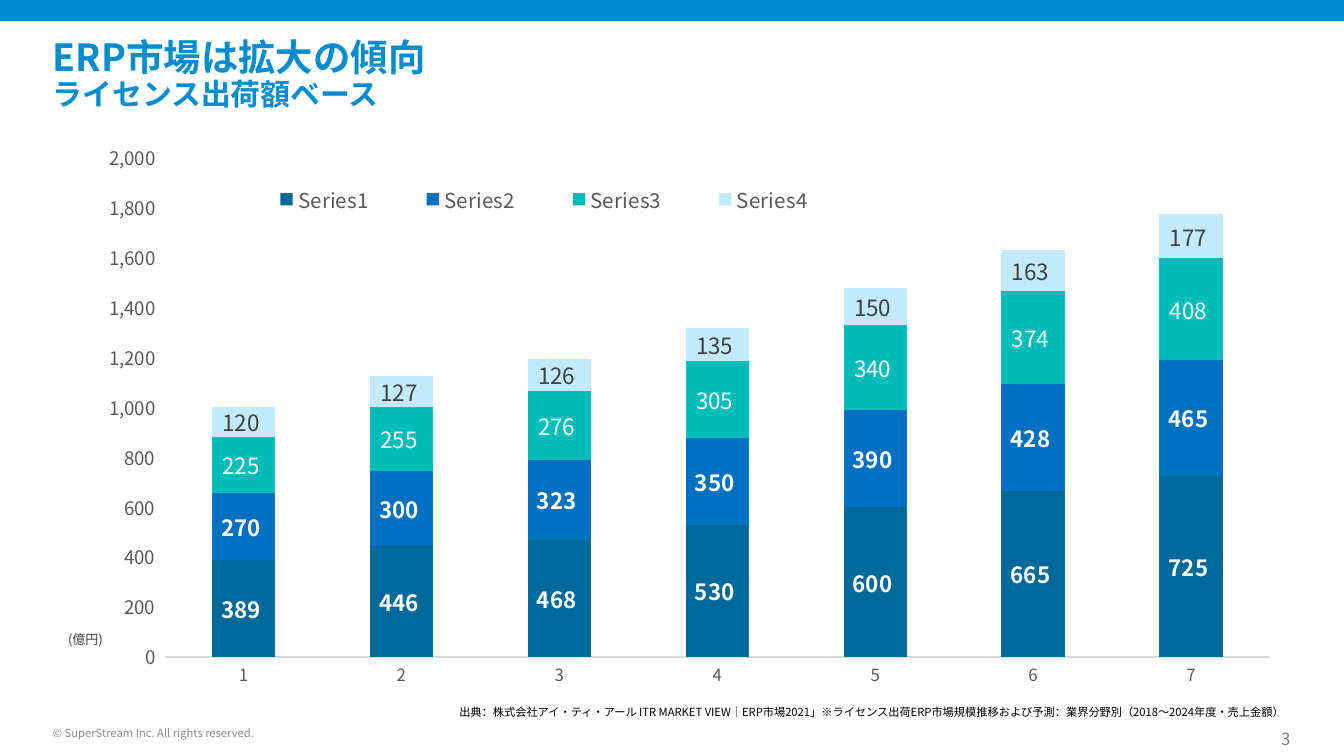
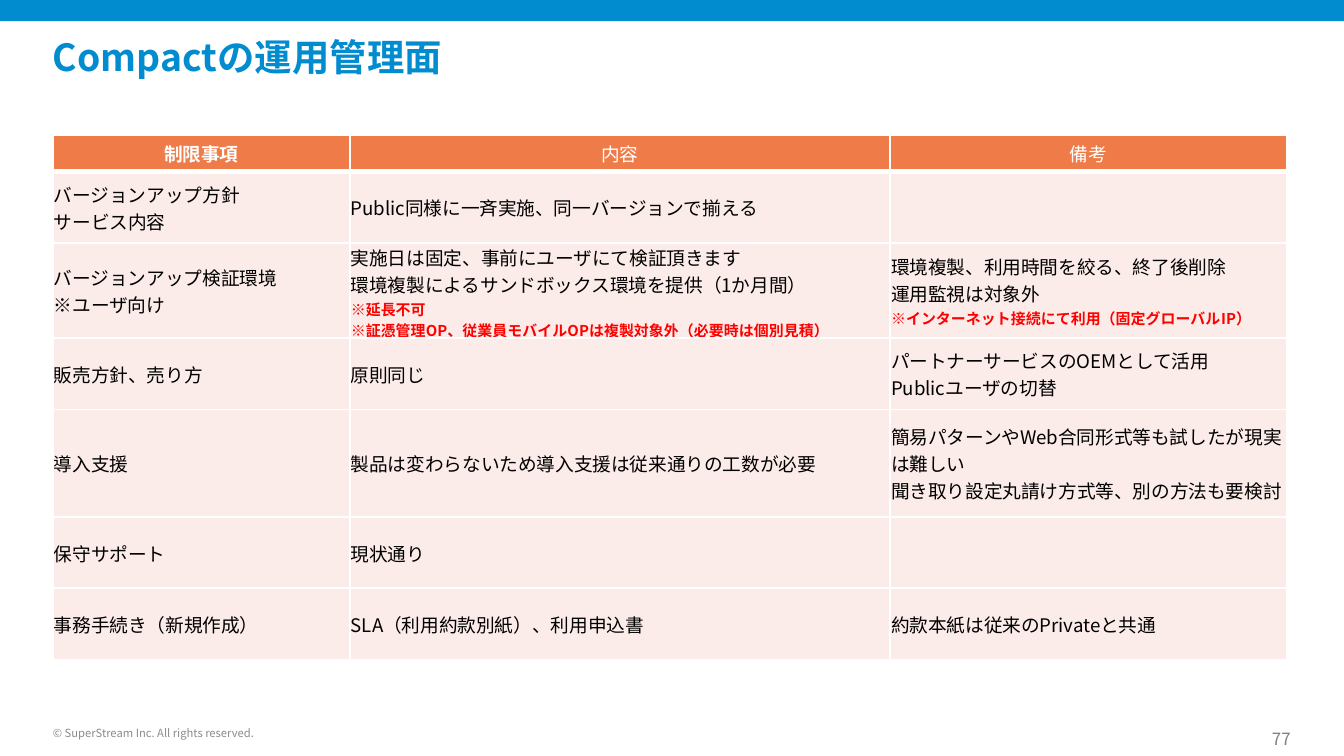
from dataclasses import dataclass

from lxml import etree
from pptx import Presentation
from pptx.chart.data import CategoryChartData
from pptx.dml.color import RGBColor
from pptx.enum.chart import XL_CHART_TYPE as ChartType
from pptx.enum.chart import XL_LEGEND_POSITION as LegendPosition
from pptx.enum.chart import XL_TICK_MARK as TickMark
from pptx.enum.shapes import MSO_SHAPE as Shape
from pptx.enum.text import MSO_ANCHOR as Anchor
from pptx.enum.text import MSO_AUTO_SIZE as AutoSize
from pptx.enum.text import PP_ALIGN as Align
from pptx.oxml.ns import qn
from pptx.util import Cm, Pt


@dataclass(frozen=True)
class Theme:
    font: str = "Noto Sans CJK JP"
    brand: str = "008CCF"
    white: str = "FFFFFF"
    black: str = "000000"
    warning: str = "FF0000"
    dark: str = "404040"
    axis_text: str = "595959"
    axis_line: str = "D9D9D9"
    copyright: str = "8C8C8C"
    page: str = "808080"
    header: str = "EE7B48"
    cell: str = "FCECE9"
    title_size: int = 20
    subtitle_size: int = 16
    label_size: int = 12
    legend_size: int = 11
    body_size: int = 10
    small_size: int = 9
    note_size: int = 8
    unit_size: int = 7
    source_size: int = 6


THEME = Theme()

# Content
COPYRIGHT = "© SuperStream Inc. All rights reserved."
NUMBER_FORMAT = r"#,##0_);[Red]\(#,##0\)"

MARKET = {
    "page": "3",
    "title": "ERP市場は拡大の傾向",
    "subtitle": "ライセンス出荷額ベース",
    "unit": "(億円)",
    "source": "出典：株式会社アイ・ティ・アール ITR MARKET VIEW｜ERP市場2021」"
              "※ライセンス出荷ERP市場規模推移および予測：業界分野別（2018～2024年度・売上金額）",
}
# values, fill, label colour, bold label
MARKET_SERIES = [
    ([389, 446, 468, 530, 600, 665, 725], "00699B", THEME.white, True),
    ([270, 300, 323, 350, 390, 428, 465], "0070C0", THEME.white, True),
    ([225, 255, 276, 305, 340, 374, 408], "00BDB9", THEME.white, False),
    ([120, 127, 126, 135, 150, 163, 177], "C2EBFF", THEME.dark, False),
]

OPERATION = {"page": "77", "title": "Compactの運用管理面"}
OPERATION_HEADER = ["制限事項", "内容", "備考"]
# Each cell is a list of lines; lines starting with NOTE_MARK are notes outside the first column
NOTE_MARK = "※"
OPERATION_ROWS = [
    (["バージョンアップ方針", "サービス内容"],
     ["Public同様に一斉実施、同一バージョンで揃える"],
     []),
    (["バージョンアップ検証環境", "※ユーザ向け"],
     ["実施日は固定、事前にユーザにて検証頂きます",
      "環境複製によるサンドボックス環境を提供（1か月間）",
      "※延長不可",
      "※証憑管理OP、従業員モバイルOPは複製対象外（必要時は個別見積）"],
     ["環境複製、利用時間を絞る、終了後削除",
      "運用監視は対象外",
      "※インターネット接続にて利用（固定グローバルIP）"]),
    (["販売方針、売り方"],
     ["原則同じ"],
     ["パートナーサービスのOEMとして活用", "Publicユーザの切替"]),
    (["導入支援"],
     ["製品は変わらないため導入支援は従来通りの工数が必要"],
     ["簡易パターンやWeb合同形式等も試したが現実は難しい",
      "聞き取り設定丸請け方式等、別の方法も要検討"]),
    (["保守サポート"], ["現状通り"], []),
    (["事務手続き（新規作成）"],
     ["SLA（利用約款別紙）、利用申込書"],
     ["約款本紙は従来のPrivateと共通"]),
]

# Layout in centimetres
SLIDE_W, SLIDE_H = 25.4, 14.29
MARGIN = 1.0
COLUMN_WIDTHS = [5.61, 10.21, 7.49]
ROW_HEIGHTS = [0.69, 1.35, 1.8, 1.35, 2.03, 1.35, 1.35]


def rgb(colour):
    return RGBColor.from_string(colour)


def style_font(font, size, colour, bold=False):
    font.name, font.size, font.bold = THEME.font, Pt(size), bold
    font.color.rgb = rgb(colour)


def add_run(paragraph, text, size, colour, bold=False):
    run = paragraph.add_run()
    run.text = text
    style_font(run.font, size, colour, bold)
    east_asian = etree.SubElement(run.font._element, qn("a:ea"))
    east_asian.set("typeface", THEME.font)


def clear_margins(frame):
    frame.margin_left = frame.margin_right = 0
    frame.margin_top = frame.margin_bottom = 0


def add_text(slide, box, text, size, colour, align=Align.LEFT, footer=False):
    frame = slide.shapes.add_textbox(*map(Cm, box)).text_frame
    frame.word_wrap = True
    if footer:
        clear_margins(frame)
        frame.vertical_anchor = Anchor.BOTTOM
    paragraph = frame.paragraphs[0]
    paragraph.alignment = align
    add_run(paragraph, text, size, colour)


# Shared slide parts: band, title, footer
def add_slide(deck, content):
    slide = deck.slides.add_slide(deck.slide_layouts.get_by_name("Title Only"))
    band = slide.shapes.add_shape(Shape.RECTANGLE, 0, 0, Cm(SLIDE_W), Cm(0.4))
    band.shadow.inherit = False
    band.fill.solid()
    band.fill.fore_color.rgb = rgb(THEME.brand)
    band.line.fill.background()

    title = slide.shapes.title
    title.left, title.top, title.width, title.height = map(Cm, (MARGIN, 0.74, 19.71, 1.62))
    frame = title.text_frame
    clear_margins(frame)
    frame.word_wrap, frame.auto_size = True, AutoSize.NONE
    frame.vertical_anchor = Anchor.TOP
    heading = frame.paragraphs[0]
    heading.alignment, heading.line_spacing = Align.LEFT, 0.9
    add_run(heading, content["title"], THEME.title_size, THEME.brand, True)
    if "subtitle" in content:
        heading.add_line_break()
        add_run(heading, content["subtitle"], THEME.subtitle_size, THEME.brand, True)

    add_text(slide, (MARGIN, 13.61, 6, 0.38), COPYRIGHT,
             THEME.source_size, THEME.copyright, footer=True)
    add_text(slide, (23.39, 13.77, 1, 0.38), content["page"],
             THEME.small_size, THEME.page, Align.RIGHT, footer=True)
    return slide


# Market chart
def place_in_chart(part, x, y, w, h, inner=False):
    """Give a plot area or legend a manual place, in fractions of the chart."""
    for old in part.findall(qn("c:layout")):
        part.remove(old)
    layout = etree.Element(qn("c:layout"))
    manual = etree.SubElement(layout, qn("c:manualLayout"))
    settings = [("layoutTarget", "inner")] if inner else []
    settings += [("xMode", "edge"), ("yMode", "edge"), ("x", x), ("y", y), ("w", w), ("h", h)]
    for tag, value in settings:
        etree.SubElement(manual, qn(f"c:{tag}")).set("val", str(value))
    position = part.find(qn("c:legendPos"))
    part.insert(0 if position is None else 1, layout)


def add_market_chart(slide):
    figures = CategoryChartData(number_format=NUMBER_FORMAT)
    figures.categories = [str(n) for n in range(1, len(MARKET_SERIES[0][0]) + 1)]
    for number, (values, *_) in enumerate(MARKET_SERIES, 1):
        figures.add_series(f"Series{number}", values)
    chart = slide.shapes.add_chart(ChartType.COLUMN_STACKED, Cm(1.6), Cm(2.49),
                                   Cm(22.86), Cm(11.63), figures).chart
    style_font(chart.font, THEME.body_size, THEME.black)
    chart.has_title = False

    plot = chart.plots[0]
    plot.gap_width, plot.overlap, plot.vary_by_categories = 150, 100, False
    for series, (_, fill, label_colour, bold) in zip(plot.series, MARKET_SERIES):
        series.format.fill.solid()
        series.format.fill.fore_color.rgb = rgb(fill)
        labels = series.data_labels
        labels.show_value = True
        labels.number_format, labels.number_format_is_linked = NUMBER_FORMAT, False
        style_font(labels.font, THEME.label_size, label_colour, bold)

    years, amounts = chart.category_axis, chart.value_axis
    for axis, size in ((years, THEME.small_size), (amounts, THEME.body_size)):
        axis.major_tick_mark = axis.minor_tick_mark = TickMark.NONE
        axis.has_major_gridlines = False
        style_font(axis.tick_labels.font, size, THEME.axis_text)
    years.format.line.color.rgb = rgb(THEME.axis_line)
    years.format.line.width = Pt(0.75)
    amounts.format.line.fill.background()
    amounts.minimum_scale, amounts.maximum_scale, amounts.major_unit = 0, 2000, 200
    amounts.tick_labels.number_format = NUMBER_FORMAT
    amounts.tick_labels.number_format_is_linked = False

    chart.has_legend = True
    legend = chart.legend
    legend.position, legend.include_in_layout = LegendPosition.BOTTOM, False
    style_font(legend.font, THEME.legend_size, THEME.axis_text)
    place_in_chart(legend._element, 0.12, 0.08, 0.52, 0.06)
    place_in_chart(plot._element.getparent(), 0.066, 0.043, 0.914, 0.811, inner=True)


# Operation table
def set_borders(cell, bottom):
    properties = cell._tc.get_or_add_tcPr()
    widths = {"lnL": 1, "lnR": 1, "lnT": 1, "lnB": bottom}
    for index, (side, width) in enumerate(widths.items()):
        line = etree.Element(qn(f"a:{side}"), w=str(Pt(width)))
        fill = etree.SubElement(line, qn("a:solidFill"))
        etree.SubElement(fill, qn("a:srgbClr")).set("val", THEME.white)
        properties.insert(index, line)


def format_cell(cell, fill, bottom=1):
    cell.fill.solid()
    cell.fill.fore_color.rgb = rgb(fill)
    cell.vertical_anchor = Anchor.MIDDLE
    cell.margin_left = cell.margin_right = cell.margin_top = Cm(0.02)
    cell.margin_bottom = 0
    set_borders(cell, bottom)


def add_operation_table(slide):
    table = slide.shapes.add_table(
        len(ROW_HEIGHTS), len(COLUMN_WIDTHS), Cm(MARGIN), Cm(2.55),
        Cm(sum(COLUMN_WIDTHS)), Cm(sum(ROW_HEIGHTS))).table
    table.horz_banding = False
    for column, width in zip(table.columns, COLUMN_WIDTHS):
        column.width = Cm(width)
    for row, height in zip(table.rows, ROW_HEIGHTS):
        row.height = Cm(height)

    for c, heading in enumerate(OPERATION_HEADER):
        cell = table.cell(0, c)
        format_cell(cell, THEME.header, bottom=3)
        paragraph = cell.text_frame.paragraphs[0]
        paragraph.alignment = Align.CENTER
        add_run(paragraph, heading, THEME.body_size, THEME.white, bold=c == 0)

    for r, row in enumerate(OPERATION_ROWS, 1):
        for c, lines in enumerate(row):
            cell = table.cell(r, c)
            format_cell(cell, THEME.cell)
            frame = cell.text_frame
            for n, line in enumerate(lines):
                paragraph = frame.add_paragraph() if n else frame.paragraphs[0]
                if c and line.startswith(NOTE_MARK):
                    add_run(paragraph, line, THEME.note_size, THEME.warning, True)
                else:
                    add_run(paragraph, line, THEME.body_size, THEME.black)


def main():
    deck = Presentation()
    deck.slide_width, deck.slide_height = Cm(SLIDE_W), Cm(SLIDE_H)

    market = add_slide(deck, MARKET)
    add_market_chart(market)
    add_text(market, (5.16, 13.21, 19.35, 0.51), MARKET["source"],
             THEME.source_size, THEME.black, Align.RIGHT)
    add_text(market, (0.33, 11.81, 2.57, 0.56), MARKET["unit"],
             THEME.unit_size, THEME.dark, Align.CENTER)

    operation = add_slide(deck, OPERATION)
    add_operation_table(operation)
    deck.save("out.pptx")


if __name__ == "__main__":
    main()
